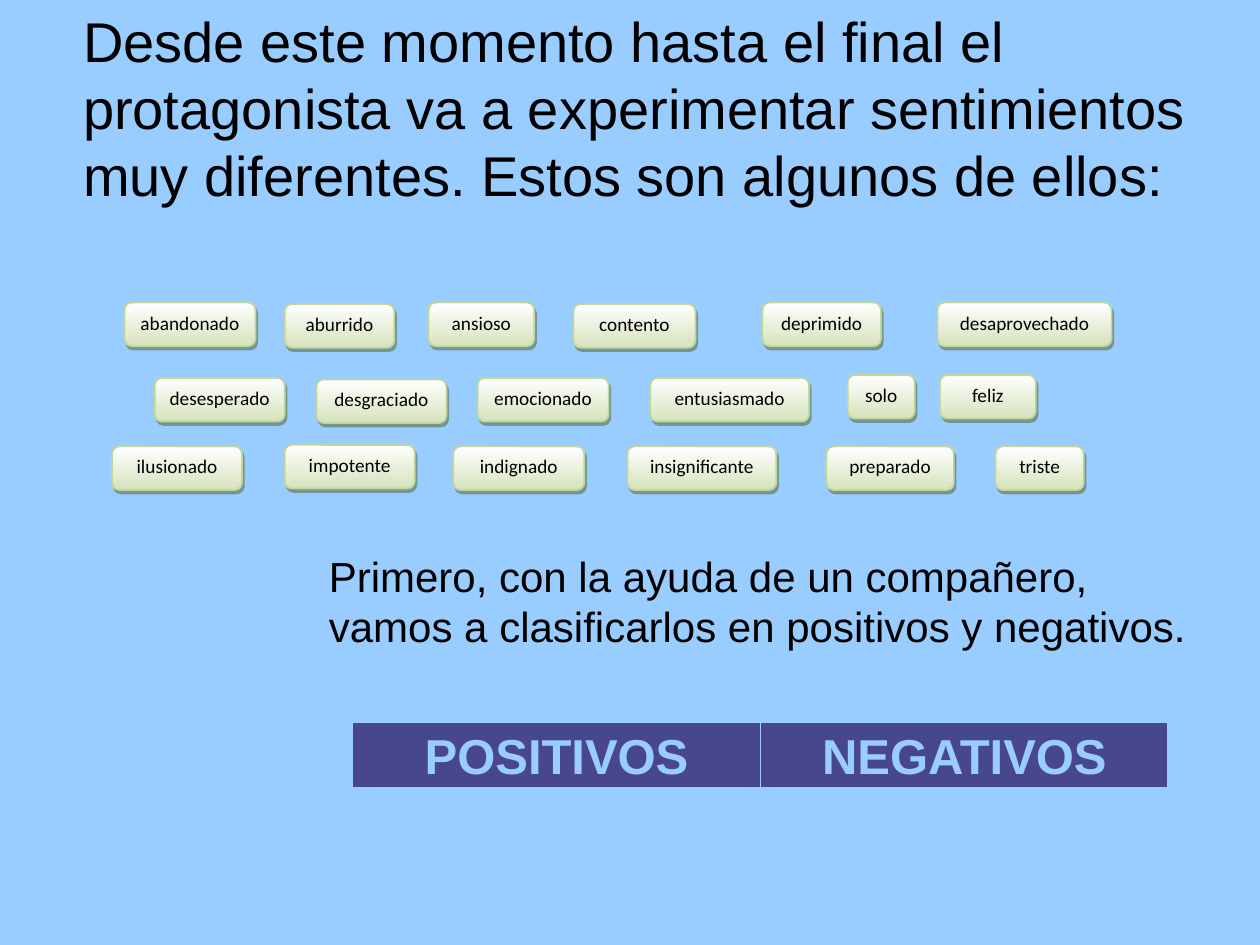
from lxml import etree
from pptx import Presentation
from pptx.dml.color import RGBColor
from pptx.enum.shapes import MSO_SHAPE
from pptx.enum.text import MSO_ANCHOR, MSO_AUTO_SIZE, PP_ALIGN
from pptx.oxml.ns import qn
from pptx.util import Cm, Pt

ROUNDED = MSO_SHAPE.ROUNDED_RECTANGLE
TOP, BOTTOM = MSO_ANCHOR.TOP, MSO_ANCHOR.BOTTOM
LEFT, CENTER = PP_ALIGN.LEFT, PP_ALIGN.CENTER
NO_AUTOFIT = MSO_AUTO_SIZE.NONE
SKY, BLACK, INDIGO = "99CCFF", "000000", "48468C"


def color(hex_string):
    return RGBColor.from_string(hex_string)


def write(frame, text, size, font_name="Arial", ink=BLACK, bold=False, align=LEFT):
    frame.word_wrap = True
    paragraph = frame.paragraphs[0]
    paragraph.text = text
    paragraph.alignment = align
    font = paragraph.runs[0].font
    for attribute, value in {"name": font_name, "size": Pt(size), "bold": bold}.items():
        setattr(font, attribute, value)
    font.color.rgb = color(ink)
    return paragraph


deck = Presentation()
deck.slide_width, deck.slide_height = Cm(25.4), Cm(19.05)
slide = deck.slides.add_slide(deck.slide_layouts[5])
slide.background.fill.solid()
slide.background.fill.fore_color.rgb = color(SKY)

intro = slide.shapes.title
for attribute, value in {"left": 1.42, "top": 0.66, "width": 23.37, "height": 3.66}.items():
    setattr(intro, attribute, Cm(value))
intro.text_frame.auto_size = NO_AUTOFIT
intro.text_frame.vertical_anchor = BOTTOM
write(intro.text_frame,
      "Desde este momento hasta el final el protagonista va a experimentar "
      "sentimientos muy diferentes. Estos son algunos de ellos:", 32)

feelings = [
    ("abandonado", 2.51, 6.1, 2.64),
    ("aburrido", 5.74, 6.13, 2.21),
    ("ansioso", 8.64, 6.1, 2.13),
    ("contento", 11.56, 6.13, 2.46),
    ("deprimido", 15.37, 6.1, 2.39),
    ("desaprovechado", 18.9, 6.1, 3.51),
    ("desesperado", 3.12, 7.62, 2.62),
    ("desgraciado", 6.38, 7.65, 2.62),
    ("emocionado", 9.63, 7.62, 2.64),
    ("entusiasmado", 13.11, 7.62, 3.2),
    ("solo", 17.09, 7.56, 1.35),
    ("feliz", 18.95, 7.56, 1.93),
    ("ilusionado", 2.26, 9, 2.62),
    ("impotente", 5.74, 8.97, 2.62),
    ("indignado", 9.14, 9, 2.64),
    ("insignificante", 12.65, 9, 3),
    ("preparado", 16.66, 9, 2.57),
    ("triste", 20.07, 9, 1.78),
]
for feeling, left, top, width in feelings:
    card = slide.shapes.add_shape(ROUNDED, Cm(left), Cm(top), Cm(width), Cm(0.88))
    card.fill.gradient()
    card.fill.gradient_angle = 270
    for stop, position, shade in zip(card.fill.gradient_stops, (0, 1), ("FFFFFF", "D6E3BC")):
        stop.position = position
        stop.color.rgb = color(shade)
    card.line.color.rgb = color("C2D69B")
    card.line.width = Pt(1)
    card.shadow.inherit = False
    effects = card._element.spPr.find(qn("a:effectLst"))
    shadow = etree.SubElement(effects, qn("a:outerShdw"), blurRad="0", dist=str(Pt(2.2)),
                              dir=str(63 * 60000), algn="ctr", rotWithShape="0")
    shadow_color = etree.SubElement(shadow, qn("a:srgbClr"), val="4E6128")
    etree.SubElement(shadow_color, qn("a:alpha"), val="50000")
    card.text_frame.vertical_anchor = TOP
    write(card.text_frame, feeling, 11, "Calibri", align=CENTER).space_after = Pt(10)

task = slide.shapes.add_textbox(Cm(6.38), Cm(10.97), Cm(17.88), Cm(2.31))
write(task.text_frame,
      "Primero, con la ayuda de un compañero, vamos a clasificarlos "
      "en positivos y negativos.", 24)

headings = ["POSITIVOS", "NEGATIVOS"]
table = slide.shapes.add_table(1, 2, Cm(7.11), Cm(14.55), Cm(16.44), Cm(1.3)).table
table.first_row = table.horz_banding = False
for column, heading in enumerate(headings):
    table.columns[column].width = Cm(8.22)
    cell = table.cell(0, column)
    cell.margin_left = cell.margin_right = Cm(0.18)
    cell.margin_top = cell.margin_bottom = Cm(0)
    paragraph = write(cell.text_frame, heading, 28, ink=SKY, bold=True, align=CENTER)
    paragraph.line_spacing = 1.15
    paragraph.space_after = Pt(12)
    properties = cell._tc.get_or_add_tcPr()
    for side, weight in {"lnL": 1, "lnR": 1, "lnT": 1, "lnB": 3}.items():
        border = etree.SubElement(properties, qn(f"a:{side}"), w=str(Pt(weight)))
        border_fill = etree.SubElement(border, qn("a:solidFill"))
        etree.SubElement(border_fill, qn("a:srgbClr"), val=SKY)
    cell.fill.solid()
    cell.fill.fore_color.rgb = color(INDIGO)

deck.save("out.pptx")
